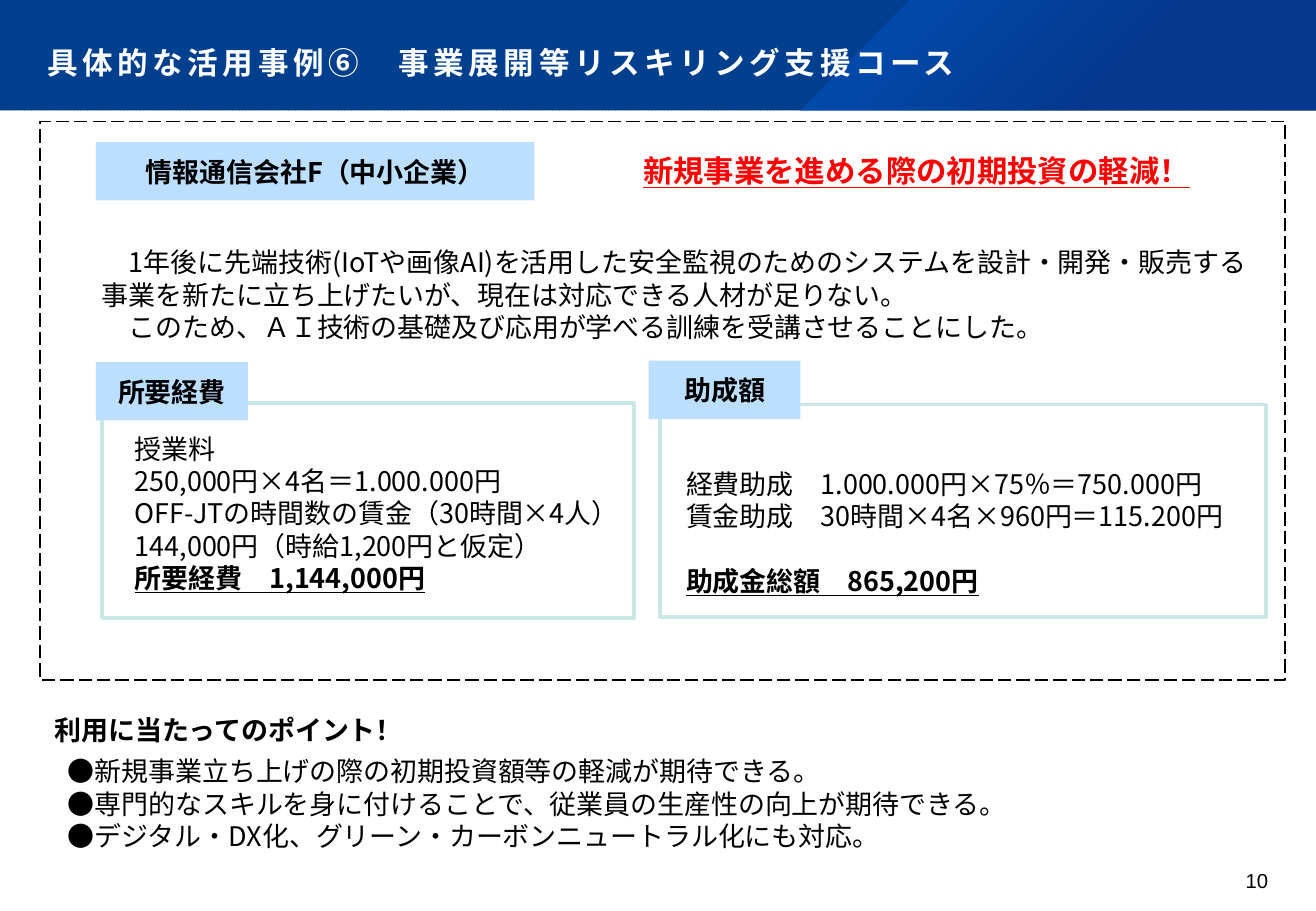
"""Build the slide on a reskilling support course and its subsidy."""
from lxml import etree
from pptx import Presentation
from pptx.dml.color import RGBColor as RGB
from pptx.enum.dml import MSO_LINE as Dash, MSO_PATTERN as Pat
from pptx.enum.shapes import MSO_SHAPE as Kind
from pptx.enum.text import MSO_ANCHOR as Anchor, PP_ALIGN as Align
from pptx.oxml.ns import qn
from pptx.util import Pt

THEME = {
    "ink": "000000", "white": "FFFFFF", "red": "FF0000",
    "sky": "BCDFFF", "mint": "C9E7E7", "navy": "003579", "blue": "004292",
    "glow": [(0, "0064DF", 50), (62, "0C338E", 55)],
    "body": 16, "call": 18, "head": 18.1, "page": 12,
    "font": "Noto Sans CJK JP", "title": "Roboto", "num": "Arial",
}
WIDE, HIGH, BAND = 780, 540, 65.5
LEAD = 1.2

TITLE = "具体的な活用事例⑥　事業展開等リスキリング支援コース"
CALL = "新規事業を進める際の初期投資の軽減！"
STORY = [
    "　1年後に先端技術(IoTや画像AI)を活用した安全監視のためのシステムを設計・開発・販売"
    "する事業を新たに立ち上げたいが、現在は対応できる人材が足りない。",
    "　このため、ＡＩ技術の基礎及び応用が学べる訓練を受講させることにした。",
]
COST = [
    "　授業料",
    "　250,000円×4名＝1.000.000円",
    "　OFF-JTの時間数の賃金（30時間×4人）",
    "　144,000円（時給1,200円と仮定）",
    [("　", False), ("所要経費　1,144,000円", True)],
]
GRANT = [
    "経費助成　1.000.000円×75％＝750.000円",
    "賃金助成　30時間×4名×960円＝115.200円",
    [("助成金総額　865,200円", True)],
]
POINTS = [
    "●新規事業立ち上げの際の初期投資額等の軽減が期待できる。",
    "●専門的なスキルを身に付けることで、従業員の生産性の向上が期待できる。",
    "●デジタル・DX化、グリーン・カーボンニュートラル化にも対応。",
]
FRAMES = [
    ((23.8, 72, 738, 331.2), "ink", 1, Dash.LONG_DASH),
    ((60.5, 239, 315.4, 127.4), "mint", 2.25, None),
    ((391, 239.8, 359.3, 126), "mint", 2.25, None),
]
TAGS = [
    ("情報通信会社F（中小企業）", (56.9, 84.2, 259.9, 34.6)),
    ("所要経費", (56.9, 214.6, 90, 34.6)),
    ("助成額", (384.5, 213.8, 90, 34.6)),
]


def tint(name):
    return RGB.from_string(THEME[name])


def rect(slide, box, fill=None, line=None, width=1, dash=None):
    shape = slide.shapes.add_shape(Kind.RECTANGLE, *map(Pt, box))
    shape.shadow.inherit = False
    shape.fill.background()
    shape.line.fill.background()
    if fill:
        shape.fill.solid()
        shape.fill.fore_color.rgb = tint(fill)
    if line:
        shape.line.color.rgb = tint(line)
        shape.line.width = Pt(width)
        shape.line.dash_style = dash
    return shape


def write(shape, lines, font="font", size="body", color="ink", bold=False,
          under=False, align=Align.LEFT, anchor=Anchor.MIDDLE,
          inset=(7.2, 3.6, 7.2, 3.6), lead=None, track=0, gap=0):
    frame = shape.text_frame
    frame.word_wrap = True
    frame.vertical_anchor = anchor
    (frame.margin_left, frame.margin_top,
     frame.margin_right, frame.margin_bottom) = map(Pt, inset)
    for i, line in enumerate(lines):
        para = frame.paragraphs[0] if i == 0 else frame.add_paragraph()
        para.alignment = align
        para.line_spacing = lead or Pt(THEME[size] * LEAD)
        total = isinstance(line, list)
        if total:
            para.space_before = Pt(gap)
        for text, mark in line if total else [(line, under)]:
            run = para.add_run()
            run.text = text
            face = run.font
            face.name, face.size = THEME[font], Pt(THEME[size])
            face.color.rgb = tint(color)
            face.bold, face.underline = bold or total, mark
            props = run._r.get_or_add_rPr()
            east = etree.SubElement(props, qn("a:ea"))
            east.set("typeface", THEME[font])
            if track:
                props.set("spc", str(round(track * 100)))


def note(slide, box, lines, **style):
    write(slide.shapes.add_textbox(*map(Pt, box)), lines, **style)


def glow(shape):
    props = shape._element.spPr
    grad = etree.Element(qn("a:gradFill"))
    stops = etree.SubElement(grad, qn("a:gsLst"))
    for pos, color, alpha in THEME["glow"]:
        stop = etree.SubElement(stops, qn("a:gs"), pos=str(pos * 1000))
        hue = etree.SubElement(stop, qn("a:srgbClr"), val=color)
        etree.SubElement(hue, qn("a:alpha"), val=str(alpha * 1000))
    way = etree.SubElement(grad, qn("a:path"), path="circle")
    etree.SubElement(way, qn("a:fillToRect"), r="100000", b="100000")
    props.find(qn("a:custGeom")).addnext(grad)


def banner(slide):
    band = rect(slide, (0, 0, WIDE, BAND))
    band.fill.patterned()
    band.fill.pattern = Pat.DARK_UPWARD_DIAGONAL
    band.fill.fore_color.rgb = tint("navy")
    band.fill.back_color.rgb = tint("blue")
    pen = slide.shapes.build_freeform(Pt(539.3), Pt(0))
    pen.add_line_segments([(Pt(x), Pt(y)) for x, y in
                           [(WIDE, 0), (WIDE, BAND), (473.8, BAND)]])
    slant = pen.convert_to_shape()
    slant.shadow.inherit = False
    slant.line.fill.background()
    glow(slant)
    note(slide, (0, 12.2, WIDE, 46.1), [TITLE], font="title", size="head",
         color="white", bold=True, anchor=Anchor.BOTTOM, lead=0.9,
         track=2.7, inset=(28.1, 0, 7.2, 10.1))


def main():
    deck = Presentation()
    deck.slide_width, deck.slide_height = Pt(WIDE), Pt(HIGH)
    slide = deck.slides.add_slide(deck.slide_layouts[6])
    banner(slide)
    for box, line, width, dash in FRAMES:
        rect(slide, box, line=line, width=width, dash=dash)
    blank = THEME["body"] * LEAD
    note(slide, (53.3, 121.7, 699.8, 105.8), STORY)
    note(slide, (56.9, 248.4, 321.1, 111.6), COST)
    note(slide, (399.6, 254.9, 350.6, 140.4), GRANT, gap=blank,
         inset=(7.2, 3.6, 7.2, 3.6 + blank))
    for text, box in TAGS:
        write(rect(slide, box, fill="sky"), [text], bold=True,
              align=Align.CENTER)
    note(slide, (350.6, 85, 385.2, 32.4), [CALL], size="call", color="red",
         bold=True, under=True, align=Align.CENTER)
    note(slide, (33.1, 430.6, 695.5, 91.4), POINTS)
    note(slide, (25.2, 415.4, 244.1, 34.6), ["利用に当たってのポイント！"],
         bold=True)
    note(slide, (702, 514.8, 49.7, 21.6), ["10"], font="num", size="page",
         align=Align.RIGHT, anchor=Anchor.TOP, inset=(0, 0, 0, 0), lead=1.0)
    deck.save("out.pptx")


if __name__ == "__main__":
    main()
